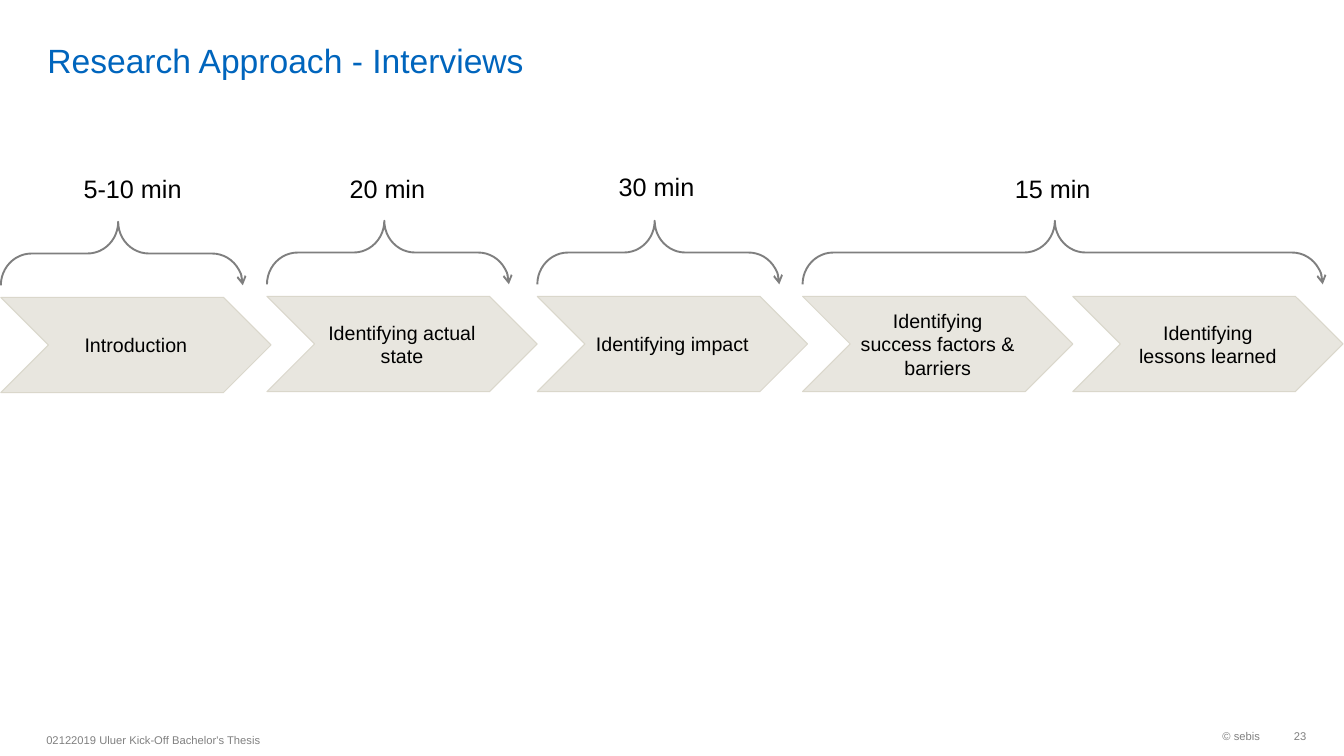
from dataclasses import dataclass

import lxml.etree
import pptx
import pptx.dml.color
import pptx.enum.shapes
import pptx.enum.text
import pptx.oxml.ns
import pptx.util

Pt = pptx.util.Pt
SHAPE = pptx.enum.shapes.MSO_SHAPE
ALIGN = pptx.enum.text.PP_ALIGN
ANCHOR = pptx.enum.text.MSO_ANCHOR
AUTO_SIZE = pptx.enum.text.MSO_AUTO_SIZE
qn = pptx.oxml.ns.qn


@dataclass(frozen=True)
class Theme:
    font: str = "Arial"
    title: str = "0065BD"
    text: str = "000000"
    footer: str = "808080"
    step_fill: str = "E8E6DF"
    step_line: str = "DAD7CB"
    brace: str = "000000"
    title_size: int = 24
    time_size: int = 18
    step_size: int = 14
    footer_size: int = 8


class SlideBuilder:
    def __init__(self, slide, theme):
        self.s = slide
        self.theme = theme

    def color(self, value):
        return pptx.dml.color.RGBColor.from_string(value)

    def add_text(self, tf, text, size, color, align=ALIGN.LEFT):
        p = tf.paragraphs[0]
        p.alignment = align
        r = p.add_run()
        r.text = text
        r.font.name = self.theme.font
        r.font.size = Pt(size)
        r.font.color.rgb = self.color(color)

    def title(self, text, left, top, width, height):
        sp = self.s.shapes.title
        sp.left, sp.top, sp.width, sp.height = map(Pt, (left, top, width, height))
        tf = sp.text_frame
        tf.auto_size = AUTO_SIZE.NONE
        tf.vertical_anchor = ANCHOR.BOTTOM
        tf.margin_top = tf.margin_bottom = 0
        self.add_text(tf, text, self.theme.title_size, self.theme.title)

    def text_box(self, left, top, width, height):
        sp = self.s.shapes.add_textbox(Pt(left), Pt(top), Pt(width), Pt(height))
        sp.text_frame.word_wrap = False
        return sp.text_frame

    def time_label(self, text, left, top, width):
        tf = self.text_box(left, top, width, 29)
        tf.auto_size = AUTO_SIZE.SHAPE_TO_FIT_TEXT
        self.add_text(tf, text, self.theme.time_size, self.theme.text)

    def footer(self, text, left, top, width, align, wrap=False, margin_right=7.2):
        tf = self.text_box(left, top, width, 23)
        tf.word_wrap = wrap
        tf.margin_right = Pt(margin_right)
        tf.vertical_anchor = ANCHOR.MIDDLE
        self.add_text(tf, text, self.theme.footer_size, self.theme.footer, align)

    def step(self, text, left, top, width, height):
        sp = self.s.shapes.add_shape(
            SHAPE.CHEVRON, Pt(left), Pt(top), Pt(width), Pt(height))
        sp.shadow.inherit = False
        sp.fill.solid()
        sp.fill.fore_color.rgb = self.color(self.theme.step_fill)
        sp.line.color.rgb = self.color(self.theme.step_line)
        sp.line.width = Pt(0.75)
        tf = sp.text_frame
        tf.word_wrap = True
        tf.vertical_anchor = ANCHOR.MIDDLE
        self.add_text(tf, text, self.theme.step_size, self.theme.text, ALIGN.CENTER)

    def brace(self, left, top, span, depth):
        sp = self.s.shapes.add_shape(
            SHAPE.LEFT_BRACE, Pt(left + (span - depth) / 2),
            Pt(top + (depth - span) / 2), Pt(depth), Pt(span))
        sp.rotation = 90
        sp.adjustments[0] = 0.483
        sp.adjustments[1] = 0.515
        sp.shadow.inherit = False
        sp.fill.background()
        sp.line.color.rgb = self.color(self.theme.brace)
        sp.line.width = Pt(1.35)
        ln = sp._element.spPr.find(qn("a:ln"))
        rgb = ln.find(".//" + qn("a:srgbClr"))
        lxml.etree.SubElement(rgb, qn("a:alpha"), val="50000")
        lxml.etree.SubElement(ln, qn("a:tailEnd"), type="arrow")


STEPS = [
    ("Introduction", 0.6, 212.4),
    ("Identifying actual state", 190.7, 211.7),
    ("Identifying impact", 383.8, 211.7),
    ("Identifying success factors & barriers", 573.3, 211.7),
    ("Identifying lessons learned", 766.3, 211.7),
]
TIMES = [
    ("5-10 min", 52.6, 120.2, 85),
    ("20 min", 242.6, 120.2, 69),
    ("30 min", 434.9, 118.8, 69),
    ("15 min", 717.8, 120.2, 69),
]
BRACE_SPANS = [172.8, 172.8, 172.8, 371.5]
BRACE_RISE = 54


def main():
    prs = pptx.Presentation()
    prs.slide_width, prs.slide_height = Pt(960), Pt(540)
    slide = prs.slides.add_slide(prs.slide_layouts[5])
    b = SlideBuilder(slide, Theme())

    b.title("Research Approach - Interviews", 26.6, 0, 834, 57)
    b.footer("© sebis", 738.7, 514, 168.5, ALIGN.RIGHT)
    b.footer("23", 907.2, 514, 26, ALIGN.RIGHT, margin_right=0)
    b.footer("02122019 Uluer Kick-Off Bachelor's Thesis",
             26, 517, 454, ALIGN.LEFT, wrap=True)

    for text, left, top in STEPS:
        b.step(text, left, top, 193, 68)
    for (_, left, top), span in zip(STEPS, BRACE_SPANS):
        b.brace(left, top - BRACE_RISE, span, 45.4)
    for text, left, top, width in TIMES:
        b.time_label(text, left, top, width)

    prs.save("out.pptx")


if __name__ == "__main__":
    main()
